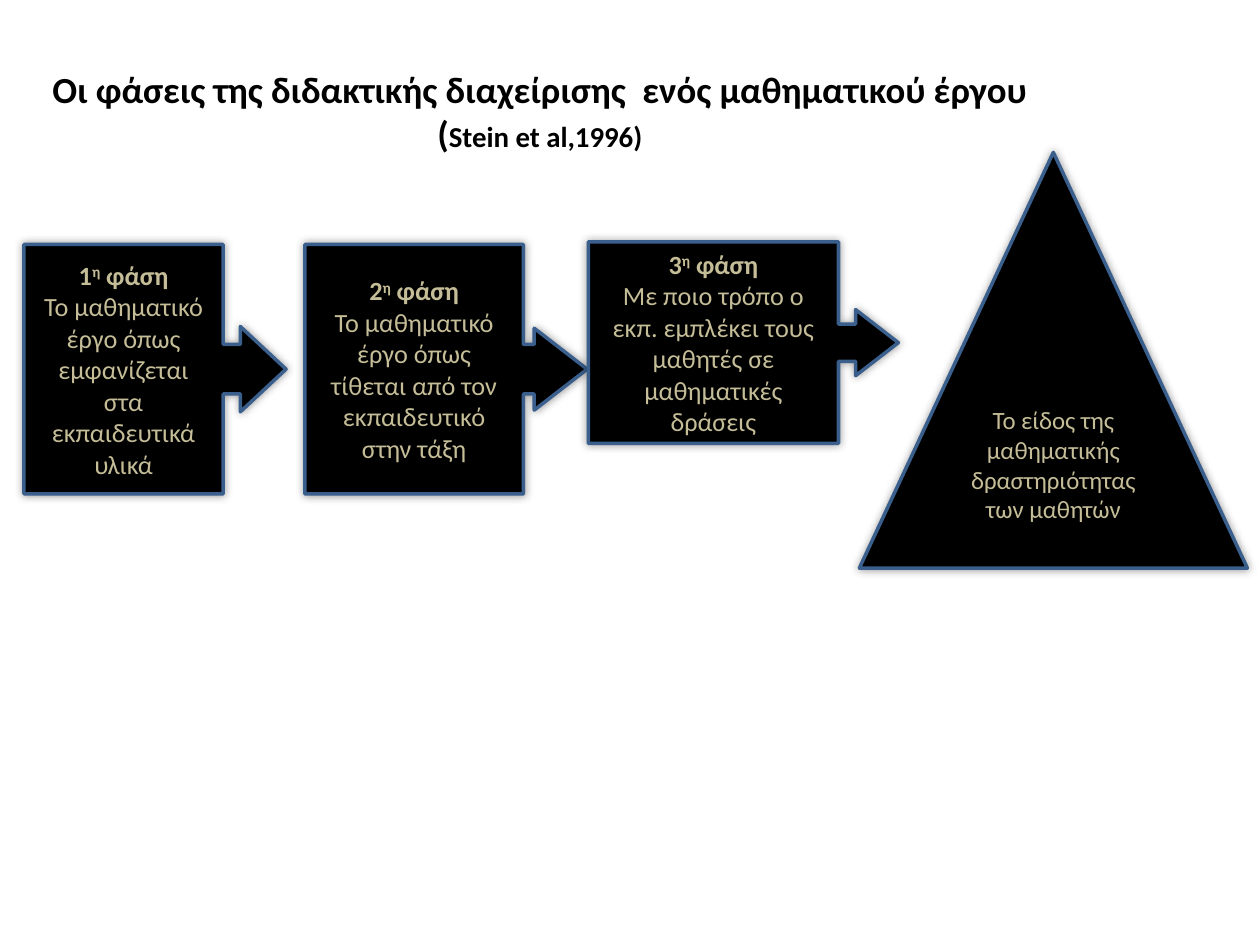
from lxml import etree
from pptx import Presentation
from pptx.dml.color import RGBColor
from pptx.enum.shapes import MSO_SHAPE
from pptx.enum.text import MSO_ANCHOR, MSO_AUTO_SIZE, PP_ALIGN
from pptx.oxml.ns import qn
from pptx.util import Inches, Pt

CALLOUT = MSO_SHAPE.RIGHT_ARROW_CALLOUT
TRIANGLE = MSO_SHAPE.ISOSCELES_TRIANGLE
CENTER = PP_ALIGN.CENTER
MIDDLE = MSO_ANCHOR.MIDDLE
NO_AUTOFIT = MSO_AUTO_SIZE.NONE
TITLE_ONLY = 5

# Number, left, top, width, height, adjustments, description
PHASES = [
    ("1", 0.19, 1.94, 2.08, 1.98, (0.199, 0.171, 0.183, 0.76),
     "Το μαθηματικό έργο όπως εμφανίζεται στα εκπαιδευτικά υλικά"),
    ("2", 2.42, 1.94, 2.24, 1.98, (0.199, 0.164, 0.212, 0.774),
     "Το μαθηματικό έργο όπως τίθεται από τον εκπαιδευτικό στην τάξη"),
    ("3", 4.67, 1.92, 2.46, 1.6, (0.185, 0.164, 0.212, 0.807),
     "Με ποιο τρόπο ο εκπ. εμπλέκει τους μαθητές σε μαθηματικές δράσεις"),
]


def color(value):
    return RGBColor.from_string(value)


class PhaseSlide:
    FONT = "Calibri"
    TITLE_COLOR = "000000"
    FILL = "000000"
    LINE = "3A5F8C"
    TEXT = "C4BD97"

    def __init__(self, presentation):
        self.slide = presentation.slides.add_slide(
            presentation.slide_layouts[TITLE_ONLY])

    def add_run(self, paragraph, text, size, font_color, bold=False):
        run = paragraph.add_run()
        run.text = text
        run.font.name = self.FONT
        run.font.size = Pt(size)
        run.font.bold = bold
        run.font.color.rgb = color(font_color)
        return run

    def title(self, text, citation, left, top, width, height):
        """Put the text on the first line and the citation below it."""
        title = self.slide.shapes.title
        title.left, title.top = Inches(left), Inches(top)
        title.width, title.height = Inches(width), Inches(height)
        frame = title.text_frame
        frame.word_wrap = True
        frame.auto_size = NO_AUTOFIT
        frame.vertical_anchor = MIDDLE
        paragraph = frame.paragraphs[0]
        paragraph.alignment = CENTER
        self.add_run(paragraph, text, 21, self.TITLE_COLOR, True)
        paragraph.add_line_break()
        self.add_run(paragraph, "(", 21, self.TITLE_COLOR, True)
        self.add_run(paragraph, citation, 16.5, self.TITLE_COLOR, True)

    def glow_shadow(self, shape):
        """Give the shape a soft shadow without offset."""
        shape.shadow.inherit = False
        effects = shape._element.spPr.find(qn("a:effectLst"))
        shadow = etree.SubElement(effects, qn("a:outerShdw"),
                                  blurRad=str(Pt(5)), dist="0", dir="0")
        shade = etree.SubElement(shadow, qn("a:srgbClr"), val="000000")
        etree.SubElement(shade, qn("a:alpha"), val="40000")

    def shape(self, kind, left, top, width, height):
        shape = self.slide.shapes.add_shape(
            kind, Inches(left), Inches(top), Inches(width), Inches(height))
        shape.fill.solid()
        shape.fill.fore_color.rgb = color(self.FILL)
        shape.line.color.rgb = color(self.LINE)
        shape.line.width = Pt(2)
        self.glow_shadow(shape)
        frame = shape.text_frame
        frame.word_wrap = True
        frame.vertical_anchor = MIDDLE
        frame.paragraphs[0].alignment = CENTER
        return shape

    def phase(self, number, left, top, width, height, adjustments, text):
        callout = self.shape(CALLOUT, left, top, width, height)
        for index, value in enumerate(adjustments):
            callout.adjustments[index] = value
        heading = callout.text_frame.paragraphs[0]
        self.add_run(heading, number, 15, self.TEXT, True)
        ordinal = self.add_run(heading, "η", 15, self.TEXT, True)
        ordinal.font._element.set("baseline", "30000")
        self.add_run(heading, " φάση", 15, self.TEXT, True)
        description = callout.text_frame.add_paragraph()
        description.alignment = CENTER
        self.add_run(description, text, 15, self.TEXT)

    def outcome(self, text, left, top, width, height):
        triangle = self.shape(TRIANGLE, left, top, width, height)
        self.add_run(triangle.text_frame.paragraphs[0], text, 14.2, self.TEXT)


def main():
    presentation = Presentation()
    presentation.slide_width = Inches(10)
    presentation.slide_height = Inches(7.5)
    slide = PhaseSlide(presentation)
    slide.title("Οι φάσεις της διδακτικής διαχείρισης  ενός μαθηματικού έργου",
                "Stein et al,1996)", 0.15, 0.17, 8.27, 1.42)
    for phase in PHASES:
        slide.phase(*phase)
    slide.outcome("Το είδος της μαθηματικής δραστηριότητας των μαθητών",
                  6.82, 1.21, 3.08, 3.3)
    presentation.save("out.pptx")


if __name__ == "__main__":
    main()
